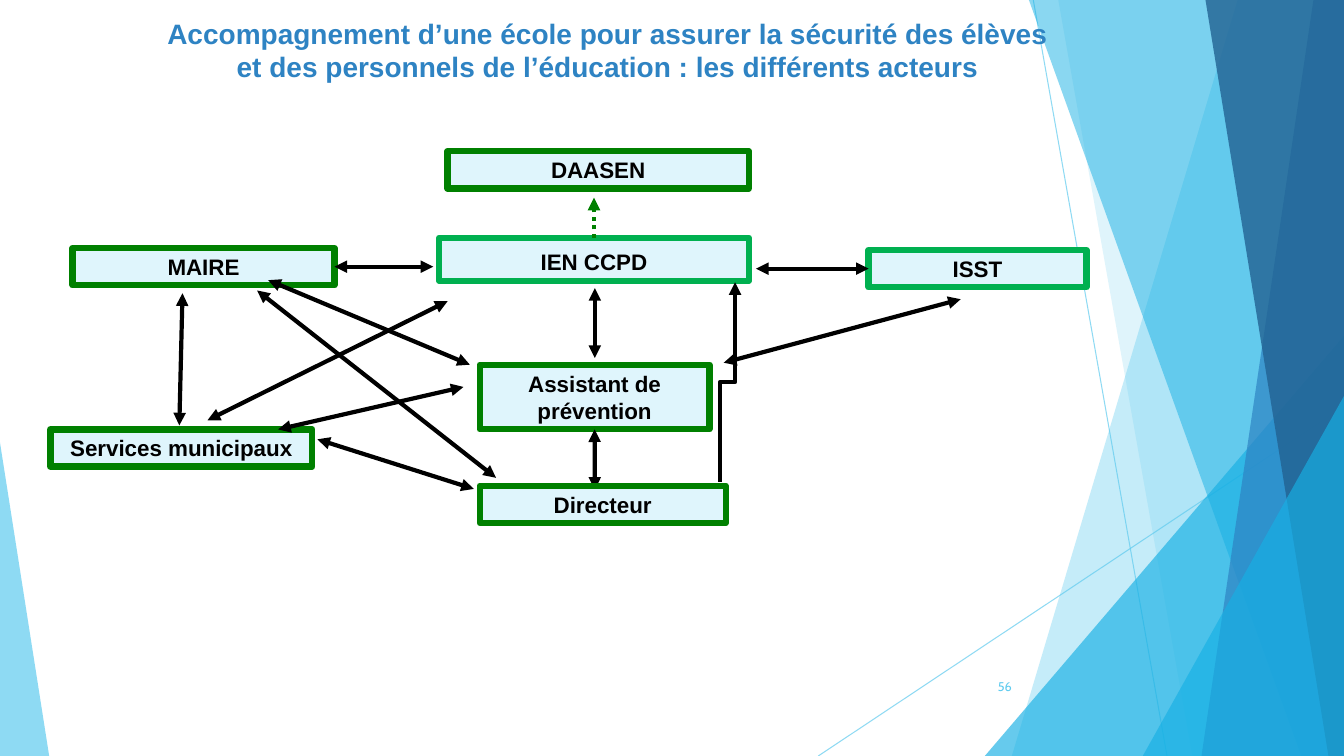
from lxml import etree
from pptx import Presentation
from pptx import util as u
from pptx.dml.color import RGBColor
from pptx.enum import dml, shapes, text
from pptx.oxml import ns


def paint(part, fill, colour, alpha=100):
    fill.solid()
    fill.fore_color.rgb = RGBColor.from_string(colour)
    if alpha < 100:
        for tint in part.element.spPr.iter(ns.qn("a:srgbClr")):
            etree.SubElement(tint, ns.qn("a:alpha")).set("val", str(alpha * 1000))


def draw_line(kind, ends, colour, weight, alpha=100, heads=(), dash=None):
    line = canvas.add_connector(kind, *[u.Cm(value) for value in ends])
    paint(line, line.line.fill, colour, alpha)
    line.line.width = u.Pt(weight)
    if dash:
        line.line.dash_style = dash
    outline = line.element.spPr.find(ns.qn("a:ln"))
    for head in heads:
        etree.SubElement(outline, ns.qn(f"a:{head}")).set("type", "triangle")
    etree.SubElement(line.element.spPr, ns.qn("a:effectLst"))
    return line


WIDTH, HEIGHT = 33.87, 19.05
STRAIGHT = shapes.MSO_CONNECTOR.STRAIGHT
BOTH, TAIL = ("headEnd", "tailEnd"), ("tailEnd",)
GREEN, BRIGHT, SKY, AZURE, BLUE = "008000", "00B050", "5FCBEF", "17B0E4", "2E83C3"

deck = Presentation()
deck.slide_width, deck.slide_height = u.Cm(WIDTH), u.Cm(HEIGHT)
slide = deck.slides.add_slide(deck.slide_layouts[5])
canvas = slide.shapes

for ray in [(26.04, 0, 29.41, HEIGHT), (WIDTH, 10.24, 20.62, HEIGHT)]:
    draw_line(STRAIGHT, ray, SKY, 0.75, 70)

facets = [
    ("slant", 31.19, 25.5, SKY, 36),
    ("slant", 26.67, 30.05, SKY, 20),
    ("right", 24.82, 8.46, AZURE, 66),
    ("slant", 25.93, 32.79, AZURE, 50),
    ("slant", 33.1, 30.28, BLUE, 70),
    ("slant", 30.38, 33.48, "226292", 80),
    ("right", 28.8, 9.98, AZURE, 66),
    ("left", 1.24, 11.15, SKY, 70),
]
for side, first, second, colour, alpha in facets:
    if side == "slant":
        edge = canvas.build_freeform(u.Cm(first), 0)
        edge.add_line_segments([(u.Cm(x), u.Cm(y)) for x, y in
                                [(WIDTH, 0), (WIDTH, HEIGHT), (second, HEIGHT)]])
        facet = edge.convert_to_shape()
    else:
        left, right = (first, WIDTH) if side == "right" else (0, first)
        facet = canvas.add_shape(shapes.MSO_SHAPE.ISOSCELES_TRIANGLE, u.Cm(left), u.Cm(second),
                                 u.Cm(right - left), u.Cm(HEIGHT - second))
        facet.adjustments[0] = 1 if side == "right" else 0
    paint(facet, facet.fill, colour, alpha)
    facet.line.fill.background()
    facet.shadow.inherit = False

heading = canvas.title
canvas.element.append(heading.element)
heading.left, heading.top, heading.width, heading.height = [u.Cm(v) for v in (3.25, 0.28, 24.13, 1.96)]
heading_frame = heading.text_frame
heading_frame.word_wrap = True
heading_frame.auto_size = text.MSO_AUTO_SIZE.NONE
heading_frame.vertical_anchor = text.MSO_ANCHOR.TOP
heading_lines = ["Accompagnement d’une école pour assurer la sécurité des élèves",
                 "et des personnels de l’éducation : les différents acteurs"]
for index, words in enumerate(heading_lines):
    paragraph = heading_frame.add_paragraph() if index else heading_frame.paragraphs[0]
    paragraph.alignment = text.PP_ALIGN.CENTER
    run = paragraph.add_run()
    run.text = words
    run.font.name, run.font.size, run.font.bold = "Arial", u.Pt(20), True
    run.font.color.rgb = RGBColor.from_string(BLUE)

actors = {}
for label, left, top, width, height, border in [
    ("IEN CCPD", 11.07, 5.99, 7.8, 1.09, BRIGHT),
    ("DAASEN", 11.28, 3.81, 7.59, 0.94, GREEN),
    ("Assistant de prévention", 12.09, 9.19, 5.79, 1.63, GREEN),
    ("Services municipaux", 1.27, 10.82, 6.6, 0.94, GREEN),
    ("ISST", 21.89, 6.3, 5.49, 0.94, BRIGHT),
    ("MAIRE", 1.83, 6.25, 6.6, 0.94, GREEN),
    ("Directeur", 12.09, 12.24, 6.2, 0.94, GREEN),
]:
    actor = canvas.add_shape(shapes.MSO_SHAPE.RECTANGLE, u.Cm(left), u.Cm(top), u.Cm(width), u.Cm(height))
    paint(actor, actor.fill, "DFF5FC")
    paint(actor, actor.line.fill, border)
    actor.line.width = u.Pt(4.5)
    actor.shadow.inherit = False
    actor.text_frame.word_wrap = True
    actor.text_frame.vertical_anchor = text.MSO_ANCHOR.MIDDLE
    paragraph = actor.text_frame.paragraphs[0]
    paragraph.alignment = text.PP_ALIGN.CENTER
    run = paragraph.add_run()
    run.text = label
    run.font.name, run.font.size, run.font.bold = "Arial", u.Pt(16), True
    run.font.color.rgb = RGBColor.from_string("000000")
    actors[label] = actor
actors["IEN CCPD"].text_frame.margin_bottom = 0

for exchange in [
    (14.99, 7.26, 14.99, 9.02),
    (6.48, 7.32, 12.5, 12.04),
    (4.6, 7.39, 4.52, 10.72),
    (8, 11.07, 11.94, 12.32),
    (7.01, 10.82, 11.68, 9.75),
    (6.76, 7.06, 11.84, 9.19),
    (5.23, 10.59, 11.28, 7.59),
    (18.24, 9.14, 24.21, 7.54),
]:
    draw_line(STRAIGHT, exchange, "000000", 3, heads=BOTH)

for label, site, ends in [
    ("MAIRE", 3, (8.43, 6.72, 10.92, 6.72)),
    ("ISST", 1, (21.89, 6.77, 19.05, 6.77)),
    ("Assistant de prévention", 2, (14.99, 10.82, 14.99, 12.34)),
]:
    draw_line(STRAIGHT, ends, "000000", 3, heads=BOTH).begin_connect(actors[label], site)

report = draw_line(STRAIGHT, (14.97, 5.99, 14.97, 4.98), GREEN, 3, heads=TAIL,
                   dash=dml.MSO_LINE.ROUND_DOT)
report.begin_connect(actors["IEN CCPD"], 0)

escalation = draw_line(shapes.MSO_CONNECTOR.ELBOW, (20.85, 9.82, 15.82, 9.44), "000000", 3, heads=TAIL)
escalation.element.spPr.find(ns.qn("a:xfrm")).set("rot", "5400000")
canvas.element.append(actors["Directeur"].element)

page = canvas.add_textbox(u.Cm(23.85), u.Cm(16.79), u.Cm(1.9), u.Cm(1.02))
page.text_frame.word_wrap = True
page.text_frame.vertical_anchor = text.MSO_ANCHOR.MIDDLE
paragraph = page.text_frame.paragraphs[0]
paragraph.alignment = text.PP_ALIGN.RIGHT
run = paragraph.add_run()
run.text = "56"
run.font.name, run.font.size = "Cabin", u.Pt(9)
run.font.color.rgb = RGBColor.from_string(SKY)

deck.save("out.pptx")
